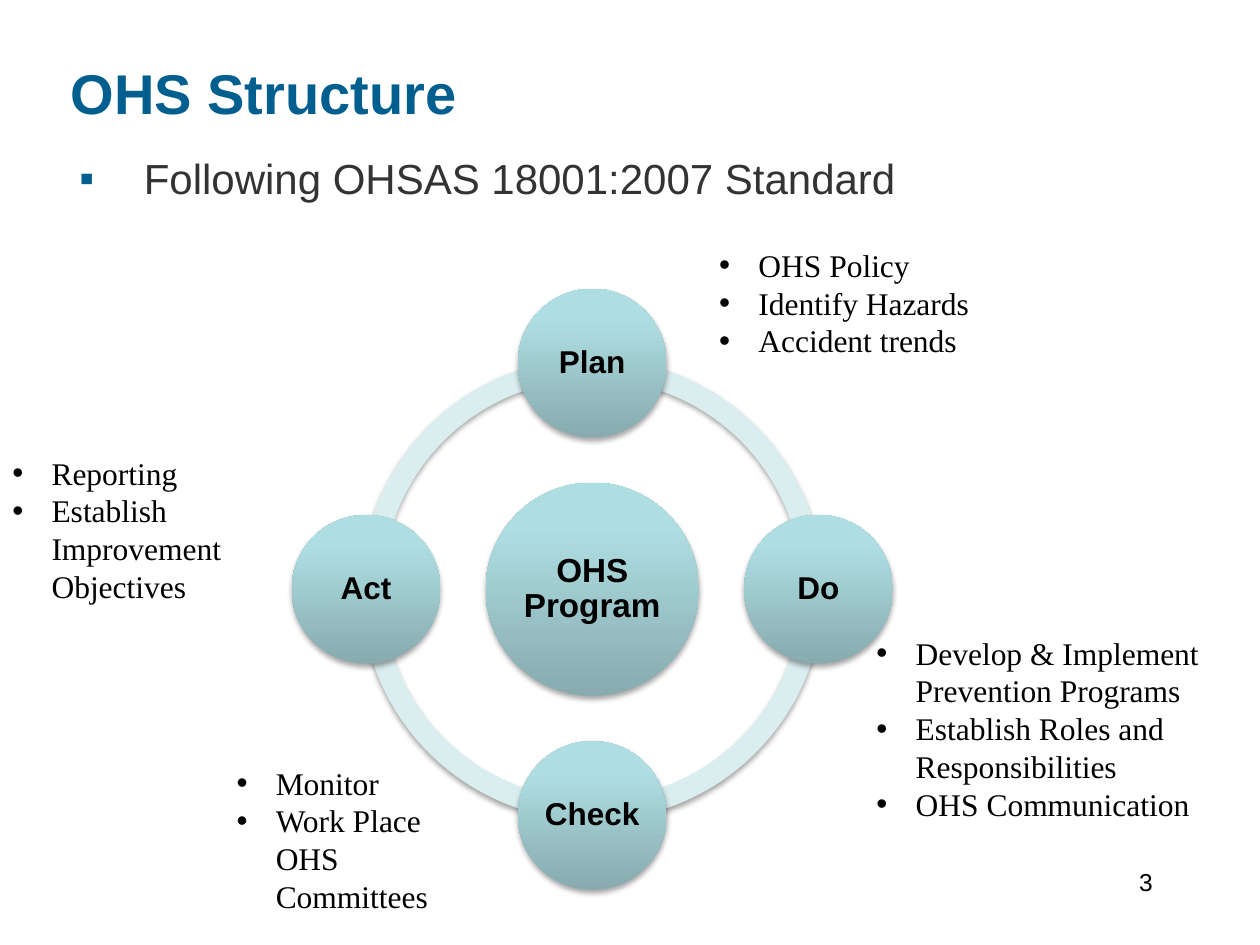
from pptx import Presentation
from pptx import util as u
from pptx.dml.color import RGBColor
from pptx.enum import shapes, text
from pptx.oxml import ns
from lxml import etree

Cm, Pt = u.Cm, u.Pt
BLACK = RGBColor(0x00, 0x00, 0x00)
BLUE = RGBColor(0x00, 0x5F, 0x8E)
GREY = RGBColor(0x33, 0x33, 0x33)
PALE = RGBColor(0xDA, 0xED, 0xEF)
STOPS = [(0, "87ABAE"), (80, "AFDEE2"), (100, "AFE0E4")]

# Content: boxes are left, top, width, height in cm
TITLE = "OHS Structure"
LEAD = "Following OHSAS 18001:2007 Standard"
NUMBER = "3"
HUB = "OHS Program"
STEPS = [("Plan", 0, -1), ("Do", 1, 0), ("Check", 0, 1), ("Act", -1, 0)]
NOTES = [
    ((14.25, 4.83, 5.79, 2.54),
     ["OHS Policy", "Identify Hazards", "Accident trends"]),
    ((4.52, 15.27, 5.89, 3.3),
     ["Monitor", "Work Place\vOHS\vCommittees"]),
    ((17.42, 12.65, 7.62, 4.06),
     ["Develop & Implement Prevention Programs",
      "Establish Roles and Responsibilities", "OHS Communication"]),
    ((0, 9.02, 6.6, 3.33),
     ["Reporting", "Establish Improvement Objectives"]),
]

# Ring geometry in cm
MID = (11.94, 11.88)
ORBIT, RING, NODE, CORE = 4.56, 9.32, 3, 4.3
BAND = 0.046
QUARTER = 54  # ninety degrees in adjustment units

# Text formats
HEAD = dict(name="Arial", size=Pt(32), bold=True, color=BLUE)
BODY = dict(name="Arial", size=Pt(24), color=GREY)
NOTE = dict(name="Times New Roman", size=Pt(18), color=BLACK)
PAGE = dict(name="Arial", size=Pt(14), color=BLACK)
STEP = dict(name="Arial", size=Pt(18), bold=True, color=BLACK)
CENTRE = dict(STEP, size=Pt(19))


def add(parent, tag, **attrs):
    return etree.SubElement(parent, ns.qn(tag), attrs)


def write(shape, lines, style, para=None, bullet=None):
    frame = shape.text_frame
    frame.word_wrap = True
    for i, line in enumerate(lines):
        p = frame.add_paragraph() if i else frame.paragraphs[0]
        p.text = line
        if bullet:
            mark, indent, color = bullet
            prop = p._p.get_or_add_pPr()
            prop.set("marL", str(Cm(indent)))
            prop.set("indent", str(-Cm(indent)))
            add(add(prop, "a:buClr"), "a:srgbClr", val=str(color))
            add(prop, "a:buFont", typeface="Arial")
            add(prop, "a:buChar", char=mark)
        for key, val in (para or {}).items():
            setattr(p, key, val)
        for run in p.runs:
            for key, val in style.items():
                if key == "color":
                    run.font.color.rgb = val
                else:
                    setattr(run.font, key, val)
    return frame


def text_box(slide, box, *args, **kw):
    return write(slide.shapes.add_textbox(*map(Cm, box)), *args, **kw)


def disc(slide, kind, x, y, size):
    """Place a shadowed, unlined shape by its centre."""
    shape = slide.shapes.add_shape(
        kind, Cm(x - size / 2), Cm(y - size / 2), Cm(size), Cm(size))
    shape.line.fill.background()
    shape.shadow.inherit = False
    effects = shape._element.spPr.find(ns.qn("a:effectLst"))
    shade = add(effects, "a:outerShdw", blurRad="40000", dist="23000",
                dir="5400000", rotWithShape="0")
    add(add(shade, "a:srgbClr", val="000000"), "a:alpha", val="35000")
    return shape


def ball(slide, label, x, y, size, style):
    shape = disc(slide, shapes.MSO_SHAPE.OVAL, x, y, size)
    shape.fill.gradient()
    shape.fill.gradient_angle = 90
    stops = shape._element.spPr.find(".//" + ns.qn("a:gsLst"))
    for old in list(stops):
        stops.remove(old)
    for pos, color in STOPS:
        add(add(stops, "a:gs", pos=str(pos * 1000)), "a:srgbClr", val=color)
    frame = write(shape, [label], style,
                  dict(alignment=text.PP_ALIGN.CENTER, line_spacing=0.9))
    frame.vertical_anchor = text.MSO_ANCHOR.MIDDLE
    for side in ("left", "right", "top", "bottom"):
        setattr(frame, "margin_" + side, Cm(0.08))


def main():
    deck = Presentation()
    deck.slide_width, deck.slide_height = Cm(25.4), Cm(19.05)
    slide = deck.slides.add_slide(deck.slide_layouts[5])

    # Title, lead line and page number
    title = slide.shapes.title
    title.left, title.top, title.width, title.height = map(
        Cm, (1.17, 0.36, 22.86, 3.18))
    frame = write(title, [TITLE], HEAD,
                  dict(alignment=text.PP_ALIGN.LEFT, line_spacing=0.9))
    frame.vertical_anchor = text.MSO_ANCHOR.MIDDLE
    frame.auto_size = text.MSO_AUTO_SIZE.NONE
    text_box(slide, (1.35, 3.15, 20.32, 1.68), [LEAD], BODY,
             dict(line_spacing=0.8), ("▪", 1.3, BLUE))
    text_box(slide, (18.21, 17.35, 5.28, 1.27), [NUMBER], PAGE,
             dict(alignment=text.PP_ALIGN.RIGHT))

    # Notes beside the steps
    for box, lines in NOTES:
        frame = text_box(slide, box, lines, NOTE, bullet=("•", 0.79, BLACK))
        frame.auto_size = text.MSO_AUTO_SIZE.SHAPE_TO_FIT_TEXT

    # Ring of four quarter arcs
    for i in range(4):
        arc = disc(slide, shapes.MSO_SHAPE.BLOCK_ARC, *MID, RING)
        start, end = i * QUARTER, (i + 1) % 4 * QUARTER
        for n, val in enumerate((start, end, BAND)):
            arc.adjustments[n] = val
        arc.fill.solid()
        arc.fill.fore_color.rgb = PALE

    # Hub and steps
    ball(slide, HUB, *MID, CORE, CENTRE)
    for label, dx, dy in STEPS:
        ball(slide, label, MID[0] + dx * ORBIT, MID[1] + dy * ORBIT,
             NODE, STEP)

    deck.save("out.pptx")


if __name__ == "__main__":
    main()
